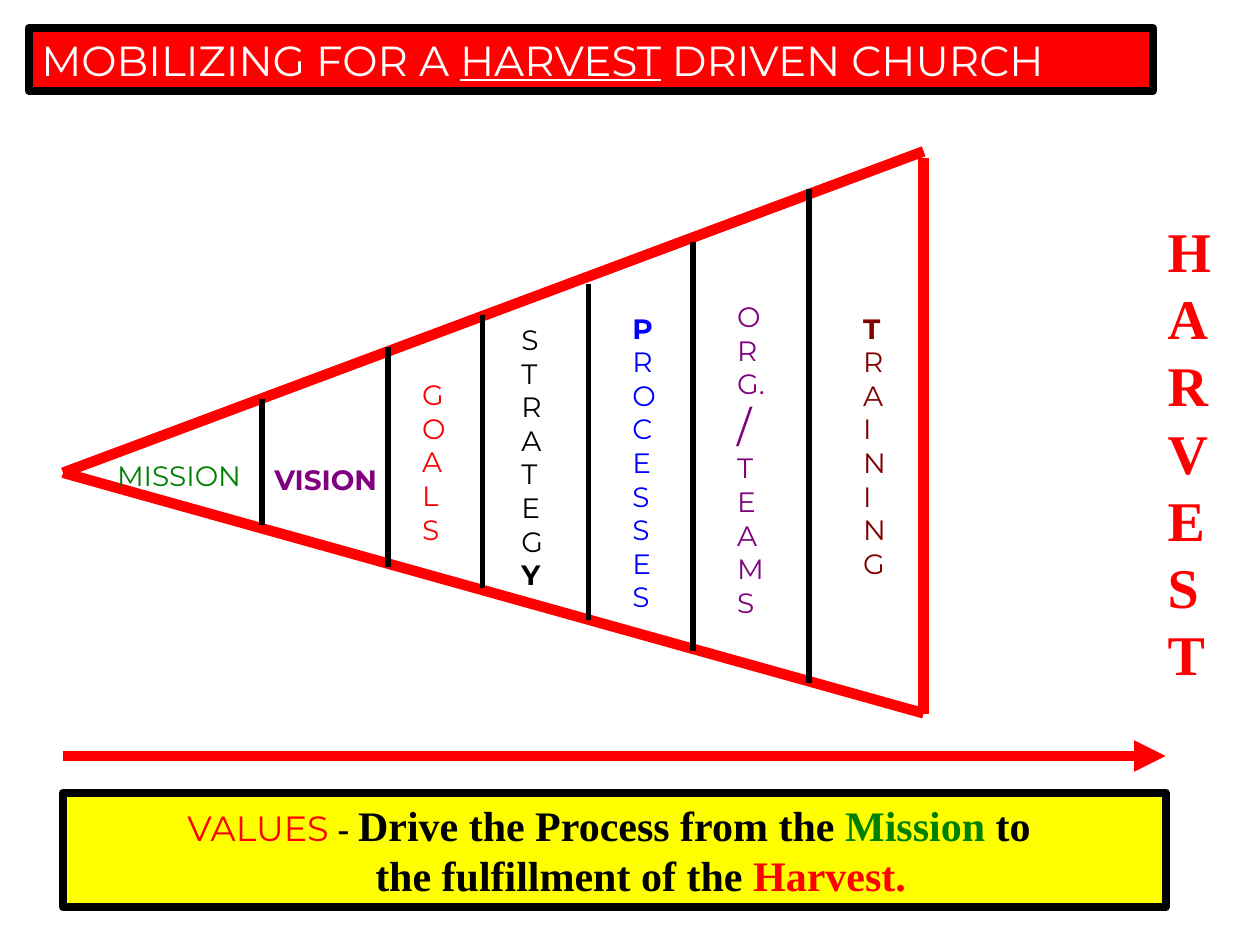
from pptx import Presentation
from pptx.dml.color import RGBColor as RGB
from pptx.enum.shapes import MSO_CONNECTOR as Link, MSO_SHAPE as Shape
from pptx.enum.text import MSO_ANCHOR as Anchor, MSO_AUTO_SIZE as Auto, PP_ALIGN as Align
from pptx.oxml.ns import qn
from pptx.util import Cm, Pt
from lxml.etree import SubElement as Sub

HUES = {"red": "FF0000", "green": "008000", "blue": "0000FF", "purple": "800080",
        "maroon": "800000", "black": "000000", "white": "FFFFFF", "yellow": "FFFF00"}
SANS, SERIF = "Montserrat", "Times New Roman"


def write(text, par, size=16, hue="black", font=SANS, bold=False, under=False):
    run = par.add_run()
    run.text = text
    run.font.size = Pt(size)
    run.font.name = font
    run.font.bold = bold
    run.font.underline = under
    run.font.color.rgb = RGB.from_string(HUES[hue])


def draw(x1, y1, x2, y2, hue="red", width=6):
    line = slide.shapes.add_connector(Link.STRAIGHT, Cm(x1), Cm(y1), Cm(x2), Cm(y2))
    line.line.color.rgb = RGB.from_string(HUES[hue])
    line.line.width = Pt(width)
    Sub(line._element.spPr, qn("a:effectLst"))
    return line


deck = Presentation()
deck.slide_width, deck.slide_height = Cm(25.4), Cm(19.05)
slide = deck.slides.add_slide(deck.slide_layouts[5])

title = slide.shapes.title
title.left, title.top, title.width, title.height = Cm(0.58), Cm(0.56), Cm(22.66), Cm(1.27)
head = title.text_frame.paragraphs[0]
head.alignment = Align.LEFT
write("MOBILIZING FOR A ", head, size=24, hue="white")
write("HARVEST", head, size=24, hue="white", under=True)
write(" DRIVEN CHURCH", head, size=24, hue="white")

values = slide.shapes.add_shape(Shape.RECTANGLE, Cm(1.27), Cm(15.98), Cm(22.23), Cm(2.31))
values.shadow.inherit = False
first = values.text_frame.paragraphs[0]
write("VALUES", first, size=20, hue="red")
write(" - ", first, size=20, font=SERIF, bold=True)
bold = {"size": 24, "font": SERIF, "bold": True}
write("Drive the Process from the ", first, **bold)
write("Mission", first, hue="green", **bold)
write(" to ", first, **bold)
second = values.text_frame.add_paragraph()
second._p.get_or_add_pPr().set("marL", str(Cm(1.06)))
write("the fulfillment of the ", second, **bold)
write("Harvest.", second, hue="red", **bold)
first.alignment = second.alignment = Align.CENTER

for box, fill in ((title, "red"), (values, "yellow")):
    box.fill.solid()
    box.fill.fore_color.rgb = RGB.from_string(HUES[fill])
    box.line.color.rgb = RGB.from_string(HUES["black"])
    box.line.width = Pt(4.5)
    box.text_frame.word_wrap = True
    box.text_frame.auto_size = Auto.NONE
    box.text_frame.vertical_anchor = Anchor.MIDDLE

draw(1.27, 9.53, 18.62, 3.05)
draw(1.27, 9.53, 18.62, 14.38)
draw(18.62, 3.18, 18.62, 14.4)
arrow = draw(1.27, 15.24, 23.5, 15.24)
Sub(arrow.line._get_or_add_ln(), qn("a:tailEnd"), type="triangle")

for x, top, low in ((5.28, 8.05, 10.59), (7.82, 6.99, 11.43), (9.73, 6.35, 11.86),
                    (11.86, 5.72, 12.5), (13.97, 4.88, 13.13), (16.31, 3.81, 13.77)):
    draw(x, top, x, low, hue="black", width=3)

steps = [
    (["MISSION"], 2.11, 9.12, 3.28, 0.94, "green", None),
    (["VISION"], 5.28, 9.2, 3, 0.94, "purple", 0),
    ("GOALS", 8.26, 7.49, 0.99, 3.65, "red", None),
    ("STRATEGY", 10.26, 6.38, 0.99, 5.74, "black", 7),
    ("PROCESSES", 12.5, 6.15, 0.84, 6.4, "blue", 0),
    (["O", "R", "G.", "/", *"TEAMS"], 14.61, 5.92, 1.32, 7.44, "purple", None),
    ("TRAINING", 17.15, 6.15, 0.64, 6.4, "maroon", 0),
]
for parts, x, y, wide, high, hue, strong in steps:
    frame = slide.shapes.add_textbox(Cm(x), Cm(y), Cm(wide), Cm(high)).text_frame
    frame.word_wrap = True
    for i, part in enumerate(parts):
        par = frame.add_paragraph() if i else frame.paragraphs[0]
        write(part, par, size=24 if part == "/" else 16, hue=hue, bold=i == strong)

goal = slide.shapes.add_textbox(Cm(23.29), Cm(4.24), Cm(1.07), Cm(9.83)).text_frame
goal.word_wrap = True
for i, part in enumerate("HARVEST"):
    par = goal.add_paragraph() if i else goal.paragraphs[0]
    write(part, par, size=32, hue="red", font=SERIF, bold=True)

deck.save("out.pptx")
